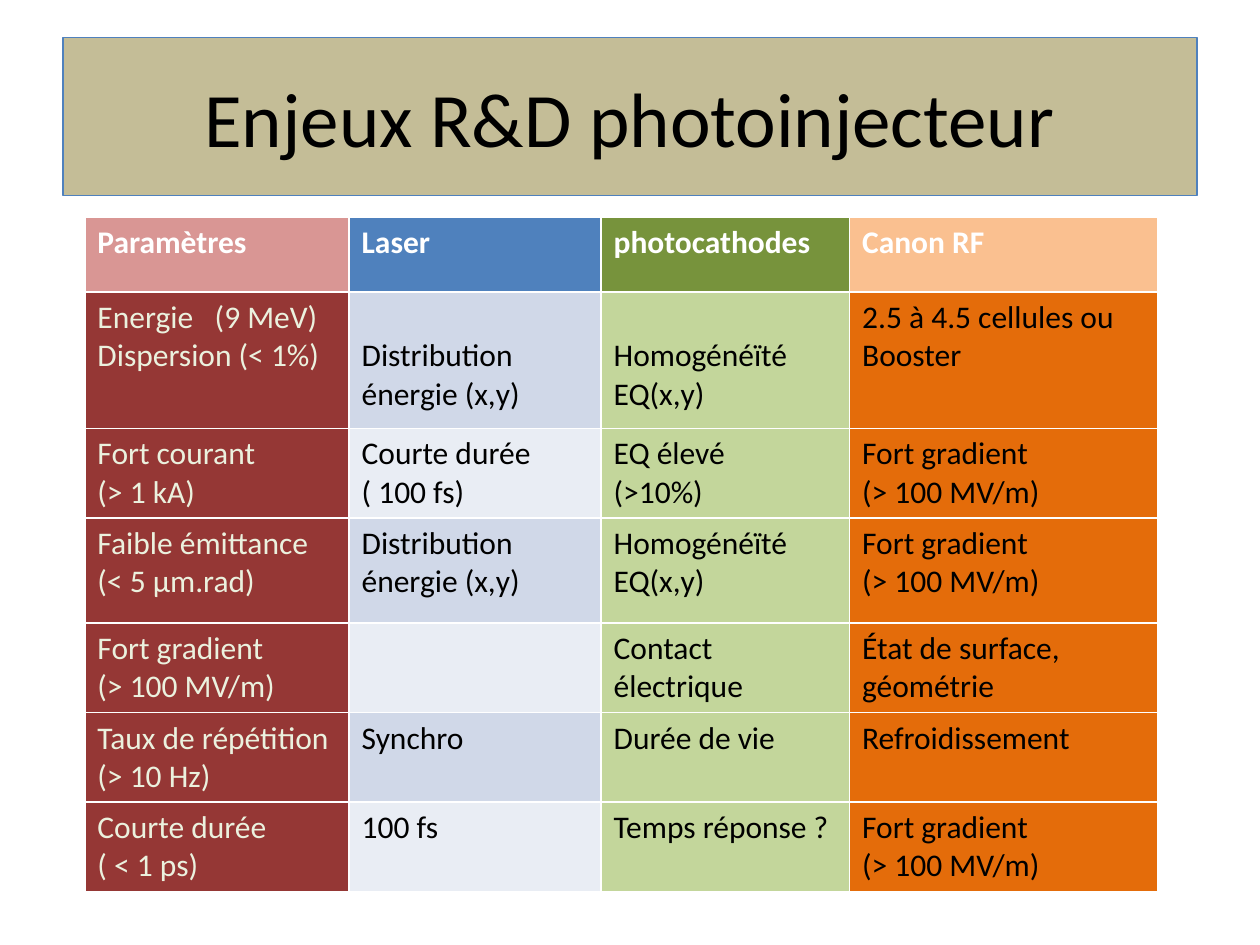
from lxml import etree
from pptx import Presentation
from pptx.dml.color import RGBColor
from pptx.enum import shapes, text
from pptx.oxml import ns
from pptx.util import Pt

FONT = "Calibri"
BLACK = RGBColor(0x00, 0x00, 0x00)
WHITE = RGBColor(0xFF, 0xFF, 0xFF)
IVORY = RGBColor(0xEB, 0xF1, 0xDE)
TAN = RGBColor(0xC4, 0xBD, 0x97)
BLUE = RGBColor(0x4F, 0x81, 0xBD)
BLUE_MID = RGBColor(0xD0, 0xD8, 0xE8)
BLUE_PALE = RGBColor(0xE9, 0xED, 0xF4)
PINK = RGBColor(0xD9, 0x96, 0x94)
DARK_RED = RGBColor(0x95, 0x37, 0x35)
GREEN = RGBColor(0x77, 0x93, 0x3C)
GREEN_PALE = RGBColor(0xC3, 0xD6, 0x9B)
PEACH = RGBColor(0xFA, 0xC0, 0x90)
ORANGE = RGBColor(0xE4, 0x6C, 0x0A)

COL_WIDTHS = [151, 144, 142, 176]
ROW_HEIGHTS = [43, 78, 51, 60, 51, 51, 51]
HEADER_FILLS = [PINK, BLUE, GREEN, PEACH]
BODY_FILLS = [DARK_RED, None, GREEN_PALE, ORANGE]  # the laser column alternates
LASER_FILLS = [BLUE_PALE, BLUE_MID]
ENERGY_TAB = 67
LOWERED_MARGIN = 25.6  # text starts one line lower
LOWERED_CELLS = [(1, 1), (1, 2)]

GRADIENT = "Fort gradient\n(> 100 MV/m)"
ROWS = [
    ["Paramètres", "Laser", "photocathodes", "Canon RF"],
    ["Energie\t(9 MeV)\nDispersion (< 1%)", "Distribution énergie (x,y)",
     "Homogénéïté\nEQ(x,y)", "2.5 à 4.5 cellules ou\nBooster"],
    ["Fort courant\n(> 1 kA)", "Courte durée\n( 100 fs)",
     "EQ élevé\n(>10%)", GRADIENT],
    ["Faible émittance\n(< 5 µm.rad)", "Distribution énergie (x,y)",
     "Homogénéïté\nEQ(x,y)", GRADIENT],
    [GRADIENT, "", "Contact électrique", "État de surface, géométrie"],
    ["Taux de répétition\n(> 10 Hz)", "Synchro", "Durée de vie",
     "Refroidissement"],
    ["Courte durée\n( < 1 ps)", "100 fs", "Temps réponse ?", GRADIENT],
]


def write_text(tf, content, color, **fmt):
    """Fill a text frame, one paragraph per line."""
    tf.text = content
    for p in tf.paragraphs:
        for name, value in {"name": FONT, **fmt}.items():
            setattr(p.font, name, value)
            for r in p.runs:
                setattr(r.font, name, value)
        for r in p.runs:
            r.font.color.rgb = color


def add_tab_stop(p, pos):
    pPr = p._p.get_or_add_pPr()
    tabs = etree.Element(ns.qn("a:tabLst"))
    etree.SubElement(tabs, ns.qn("a:tab"), pos=str(Pt(pos)), algn="l")
    pPr.insert(0, tabs)


def add_title(s, title):
    sp = s.shapes.add_shape(shapes.MSO_SHAPE.RECTANGLE,
                            Pt(36), Pt(21.6), Pt(648), Pt(90))
    sp.shadow.inherit = False
    sp.fill.solid()
    sp.fill.fore_color.rgb = TAN
    sp.line.color.rgb = BLUE
    sp.line.width = Pt(0.75)
    tf = sp.text_frame
    tf.word_wrap = True
    tf.vertical_anchor = text.MSO_ANCHOR.MIDDLE
    write_text(tf, title, BLACK, size=Pt(44))
    tf.paragraphs[0].alignment = text.PP_ALIGN.CENTER


def cell_colors(i, j):
    """Return fill and font colour for row i, column j."""
    if i == 0:
        return HEADER_FILLS[j], WHITE
    fill = BODY_FILLS[j] or LASER_FILLS[i % 2]
    return fill, IVORY if j == 0 else BLACK


def add_issue_table(s):
    tbl = s.shapes.add_table(len(ROWS), len(COL_WIDTHS), Pt(48.5), Pt(124),
                             Pt(sum(COL_WIDTHS)), Pt(sum(ROW_HEIGHTS))).table
    tbl.horz_banding = False
    for col, width in zip(tbl.columns, COL_WIDTHS):
        col.width = Pt(width)
    for row, height in zip(tbl.rows, ROW_HEIGHTS):
        row.height = Pt(height)

    # Cells
    for i, row in enumerate(ROWS):
        for j, content in enumerate(row):
            cell = tbl.cell(i, j)
            fill, color = cell_colors(i, j)
            cell.fill.solid()
            cell.fill.fore_color.rgb = fill
            write_text(cell.text_frame, content, color,
                       size=Pt(18), bold=i == 0)

    # Spacing in the energy row
    for i, j in LOWERED_CELLS:
        tbl.cell(i, j).margin_top = Pt(LOWERED_MARGIN)
    add_tab_stop(tbl.cell(1, 0).text_frame.paragraphs[0], ENERGY_TAB)


def main():
    prs = Presentation()
    prs.slide_width, prs.slide_height = Pt(720), Pt(540)
    s = prs.slides.add_slide(prs.slide_layouts[6])
    add_title(s, "Enjeux R&D photoinjecteur")
    add_issue_table(s)
    prs.save("out.pptx")


if __name__ == "__main__":
    main()
